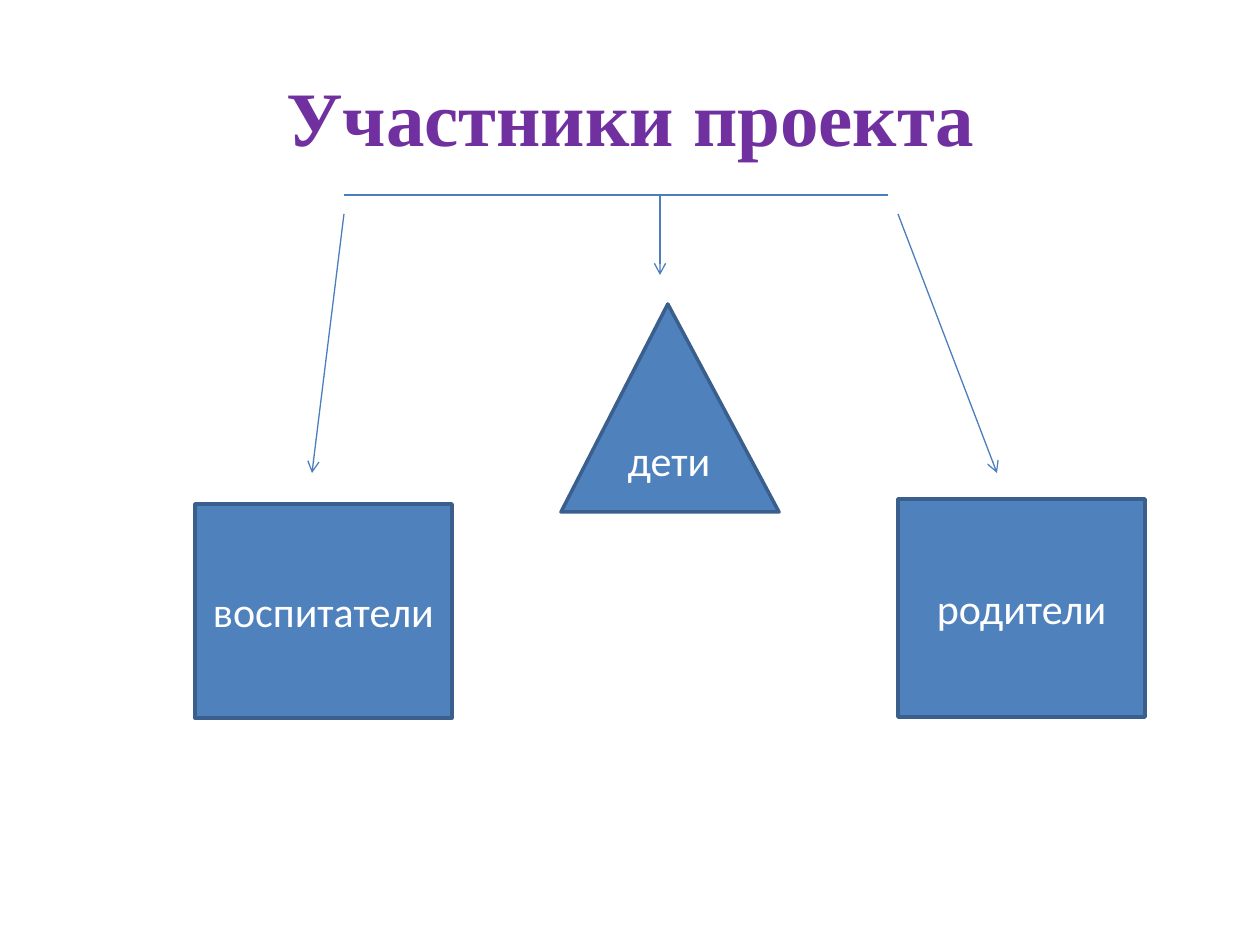
from lxml import etree
from pptx import Presentation
from pptx import util as u
from pptx.dml.color import RGBColor
from pptx.enum import shapes, text
from pptx.oxml import ns

PX = 914400 / 126
WHITE, PURPLE = "FFFFFF", "7030A0"
FILL, OUTLINE, ARROW = "4F81BD", "3A5F8C", "4B7EBC"


def px(*lengths):
    return [u.Emu(round(length * PX)) for length in lengths]


def color(value):
    return RGBColor.from_string(value)


def write(shape, words, font_name, size, font_color, bold=False):
    frame = shape.text_frame
    frame.word_wrap = True
    frame.vertical_anchor = text.MSO_ANCHOR.MIDDLE
    paragraph = frame.paragraphs[0]
    paragraph.alignment = text.PP_ALIGN.CENTER
    run = paragraph.add_run()
    run.text = words
    run.font.name = font_name
    run.font.size = u.Pt(size)
    run.font.bold = bold
    run.font.color.rgb = color(font_color)


def add_title(slide, box):
    title = slide.shapes.title
    title.left, title.top, title.width, title.height = px(*box)
    write(title, "Участники проекта", "Times New Roman", 44, PURPLE, bold=True)


def add_participant(slide, kind, box, words):
    shape = slide.shapes.add_shape(kind, *px(*box))
    shape.shadow.inherit = False
    shape.fill.solid()
    shape.fill.fore_color.rgb = color(FILL)
    shape.line.color.rgb = color(OUTLINE)
    shape.line.width = u.Pt(2)
    write(shape, words, "Calibri", 24, WHITE)
    return shape


def add_line(slide, start, end, arrow=True):
    connector = slide.shapes.add_connector(
        shapes.MSO_CONNECTOR.STRAIGHT, *px(*start, *end))
    connector.line.color.rgb = color(ARROW)
    connector.line.width = u.Pt(0.75)
    if arrow:
        line = connector.line._get_or_add_ln()
        etree.SubElement(line, ns.qn("a:tailEnd"), type="arrow")
    etree.SubElement(connector._element.spPr, ns.qn("a:effectLst"))


def add_diagram(slide, left, top):
    def at(x, y):
        return left + x, top + y

    rectangle = shapes.MSO_SHAPE.RECTANGLE
    add_participant(slide, rectangle, (*at(0, 309), 257, 214), "воспитатели")
    children = add_participant(
        slide, shapes.MSO_SHAPE.ISOSCELES_TRIANGLE, (*at(366, 109), 218, 208), "дети")
    children.adjustments[0] = 0.49
    add_participant(slide, rectangle, (*at(703, 304), 247, 218), "родители")

    for start, end in (
        ((703, 19), (802, 278)),
        ((465, 0), (465, 80)),
        ((149, 19), (117, 278)),
    ):
        add_line(slide, at(*start), at(*end))
    add_line(slide, at(149, 0), at(693, 0), arrow=False)


def main():
    presentation = Presentation()
    presentation.slide_width, presentation.slide_height = px(1260, 945)
    slide = presentation.slides.add_slide(presentation.slide_layouts[5])
    add_title(slide, (64, 37, 1134, 158))
    add_diagram(slide, 195, 195)
    presentation.save("out.pptx")


if __name__ == "__main__":
    main()
